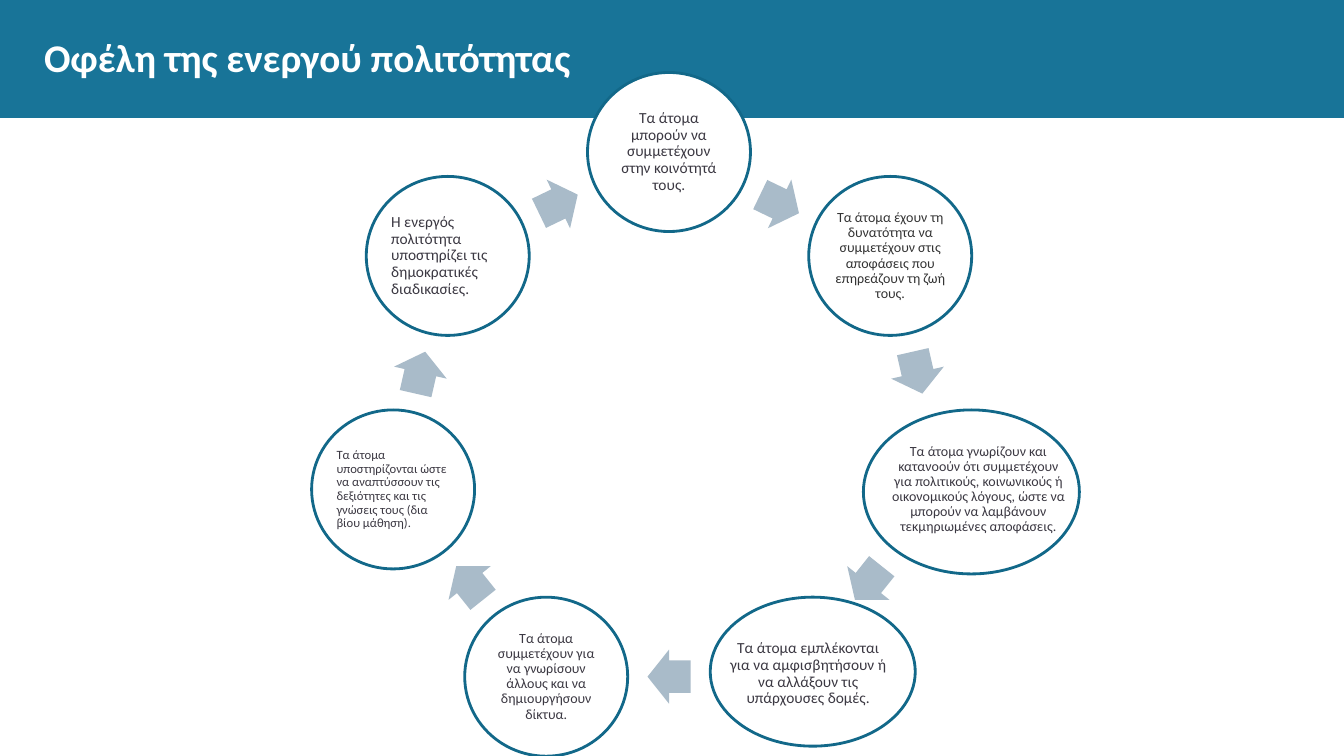
from dataclasses import dataclass
from math import cos, pi, sin

from pptx import Presentation
from pptx.dml.color import RGBColor
from pptx.enum.shapes import MSO_SHAPE
from pptx.enum.text import MSO_ANCHOR, PP_ALIGN
from pptx.shapes.autoshape import Shape
from pptx.slide import Slide
from pptx.util import Emu, Pt

SLIDE_W, SLIDE_H = 1344, 756
EMU_PER_PX = 12192000 / SLIDE_W
FONT = "Calibri"
TEAL, RING_TEAL, ARROW_GREY, WHITE = "187498", "126889", "A9BBC9", "FFFFFF"
INK, DARK_GREY = "3B3842", "333333"

# The circles sit at equal angles on an ellipse, clockwise from the top
CENTRE_X, CENTRE_Y = 669, 428
RADIUS_X, RADIUS_Y = 283, 276
CIRCLE_W, CIRCLE_H = 163, 159
ARROW_W, ARROW_H = 43, 54


@dataclass(frozen=True)
class Benefit:
    text: str
    size: int
    align: PP_ALIGN = PP_ALIGN.CENTER
    color: str = INK
    width: int = CIRCLE_W
    height: int = CIRCLE_H
    text_dx: int = 24
    text_dy: int = 23
    text_width: int = 115
    text_height: int = 113


BENEFITS = [
    Benefit("Τα άτομα μπορούν να συμμετέχουν στην κοινότητά τους.", 11),
    Benefit("Τα άτομα έχουν τη δυνατότητα να συμμετέχουν στις αποφάσεις "
            "που επηρεάζουν τη ζωή τους.", 10, color=DARK_GREY),
    Benefit("Τα άτομα γνωρίζουν και κατανοούν ότι συμμετέχουν για πολιτικούς, "
            "κοινωνικούς ή οικονομικούς λόγους, ώστε να μπορούν να λαμβάνουν "
            "τεκμηριωμένες αποφάσεις.", 10, width=216, height=164, text_width=182),
    Benefit("Τα άτομα εμπλέκονται για να αμφισβητήσουν ή να αλλάξουν τις "
            "υπάρχουσες δομές.", 11, width=205, height=149,
            text_dx=17, text_dy=20, text_width=162),
    Benefit("Τα άτομα συμμετέχουν για να γνωρίσουν άλλους και να "
            "δημιουργήσουν δίκτυα.", 10),
    Benefit("Τα άτομα υποστηρίζονται ώστε να αναπτύσσουν τις δεξιότητες και "
            "τις γνώσεις τους (δια βίου μάθηση).", 9, PP_ALIGN.LEFT),
    Benefit("Η ενεργός πολιτότητα υποστηρίζει τις δημοκρατικές διαδικασίες.",
            11, PP_ALIGN.LEFT),
]
STEP = 2 * pi / len(BENEFITS)


def px(length: float) -> Emu:
    return Emu(round(length * EMU_PER_PX))


def rgb(color: str) -> RGBColor:
    return RGBColor.from_string(color)


def add_filled(slide: Slide, kind: MSO_SHAPE, left: float, top: float,
               width: int, height: int, fill: str, outline: str = "") -> Shape:
    shape = slide.shapes.add_shape(kind, px(left), px(top), px(width), px(height))
    shape.shadow.inherit = False
    shape.fill.solid()
    shape.fill.fore_color.rgb = rgb(fill)
    if outline:
        shape.line.color.rgb = rgb(outline)
        shape.line.width = Pt(2)
    else:
        shape.line.fill.background()
    return shape


def add_text(slide: Slide, text: str, left: float, top: float, width: int,
             height: int, size: int, color: str, align: PP_ALIGN = PP_ALIGN.LEFT,
             inset: int = 0, spacing: float = 1.0, bold: bool = False) -> None:
    frame = slide.shapes.add_textbox(px(left), px(top), px(width), px(height)).text_frame
    frame.word_wrap = True
    frame.vertical_anchor = MSO_ANCHOR.MIDDLE
    frame.margin_left = frame.margin_right = px(inset)
    frame.margin_top = frame.margin_bottom = px(inset)
    paragraph = frame.paragraphs[0]
    paragraph.text = text
    paragraph.alignment = align
    paragraph.line_spacing = spacing
    paragraph.font.name = FONT
    paragraph.font.size = Pt(size)
    paragraph.font.bold = bold
    paragraph.font.color.rgb = rgb(color)


def ring_point(position: int) -> tuple[float, float]:
    angle = position * STEP
    return CENTRE_X + RADIUS_X * sin(angle), CENTRE_Y - RADIUS_Y * cos(angle)


def add_benefit(slide: Slide, position: int, benefit: Benefit) -> None:
    x, y = ring_point(position)
    left, top = x - CIRCLE_W / 2, y - CIRCLE_H / 2
    add_filled(slide, MSO_SHAPE.OVAL, left, top, benefit.width, benefit.height,
               WHITE, RING_TEAL)
    add_text(slide, benefit.text, left + benefit.text_dx, top + benefit.text_dy,
             benefit.text_width, benefit.text_height, benefit.size, benefit.color,
             benefit.align, inset=1, spacing=0.9)


def add_arrow(slide: Slide, position: int) -> None:
    """Place an arrow halfway between one circle and the next."""
    (x1, y1), (x2, y2) = ring_point(position), ring_point(position + 1)
    arrow = add_filled(slide, MSO_SHAPE.RIGHT_ARROW, (x1 + x2 - ARROW_W) / 2,
                       (y1 + y2 - ARROW_H) / 2, ARROW_W, ARROW_H, ARROW_GREY)
    arrow.adjustments[0] = 0.6
    arrow.adjustments[1] = 0.5
    arrow.rotation = (position + 0.5) * 360 / len(BENEFITS)


def main() -> None:
    deck = Presentation()
    deck.slide_width, deck.slide_height = px(SLIDE_W), px(SLIDE_H)
    slide = deck.slides.add_slide(deck.slide_layouts[6])

    # Title banner
    add_filled(slide, MSO_SHAPE.RECTANGLE, 0, 0, SLIDE_W, 118, TEAL)

    # Cycle of benefits
    for position, benefit in enumerate(BENEFITS):
        add_benefit(slide, position, benefit)
        add_arrow(slide, position)

    # Title
    add_text(slide, "Οφέλη της ενεργού πολιτότητας", 44, 19, 1256, 75,
             28, WHITE, bold=True)

    deck.save("out.pptx")


if __name__ == "__main__":
    main()
